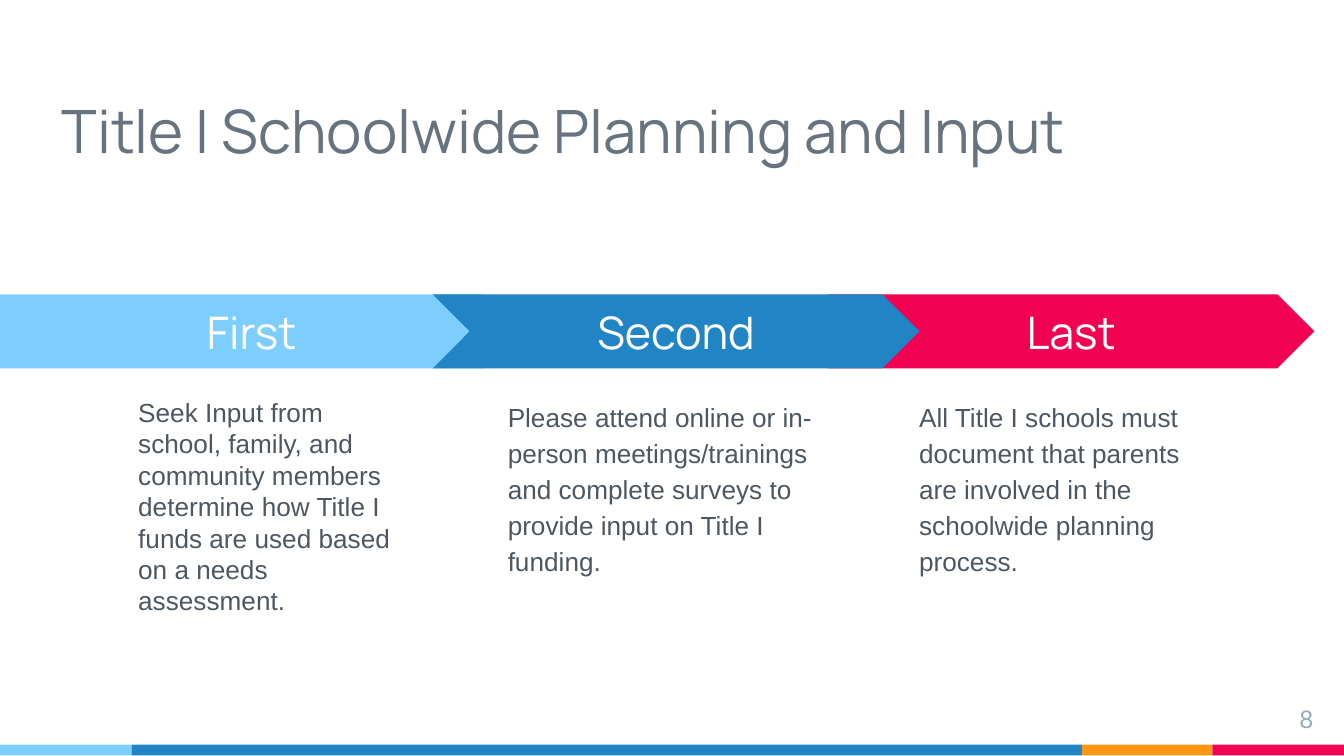
from pptx import Presentation
from pptx.dml.color import RGBColor
from pptx.enum import shapes, text
from pptx.util import Inches, Pt

SKY = RGBColor(0x7E, 0xCE, 0xFD)
BLUE = RGBColor(0x21, 0x85, 0xC5)
ORANGE = RGBColor(0xFF, 0x97, 0x15)
RED = RGBColor(0xF2, 0x02, 0x53)
WHITE = RGBColor(0xFF, 0xFF, 0xFF)
TITLE_GRAY = RGBColor(0x67, 0x74, 0x80)
BODY_GRAY = RGBColor(0x4D, 0x57, 0x60)
NUMBER_GRAY = RGBColor(0x97, 0xAB, 0xBC)

# Content
TITLE = "Title I Schoolwide Planning and Input"
PAGE_NUMBER = "8"
FOOTER = [(0.98, SKY), (7.07, BLUE), (0.97, ORANGE), (0.98, RED)]  # width, colour

# Back to front: each arrow covers the tail of the one behind it
PENTAGON, CHEVRON = shapes.MSO_SHAPE.PENTAGON, shapes.MSO_SHAPE.CHEVRON
STEPS = [  # label, preset, left, width, colour
    ("Last", CHEVRON, 6.16, 3.62, RED),
    ("First", PENTAGON, 0, 3.88, SKY),
    ("Second", CHEVRON, 3.22, 3.62, BLUE),
]
DETAILS = [  # text, (left, top, width, height), vertical inset, line spacing
    ("Seek Input from school, family, and community members determine how "
     "Title I funds are used based on a needs assessment.",
     (0.93, 2.9, 2.18, 1.51), 0.05, 1.0),
    ("Please attend online or in-person meetings/trainings and complete "
     "surveys to provide input on Title I funding.",
     (3.68, 2.85, 2.54, 2.24), 0.1, 1.15),
    ("All Title I schools must document that parents are involved in the "
     "schoolwide planning process.",
     (6.74, 2.85, 2.45, 2.19), 0.1, 1.15),
]
ARROW_TOP, ARROW_HEIGHT = 2.19, 0.55
FOOTER_TOP, FOOTER_HEIGHT = 5.54, 0.08

# Widescreen 16:9 page
deck = Presentation()
deck.slide_width = Inches(10)
deck.slide_height = deck.slide_width * 9 // 16
page = deck.slides.add_slide(deck.slide_layouts[6])


def write(shape, words, size, font, color, align=text.PP_ALIGN.LEFT,
          anchor=text.MSO_ANCHOR.TOP, inset=0.1, spacing=None):
    frame = shape.text_frame
    frame.word_wrap = True
    frame.vertical_anchor = anchor
    frame.margin_left = frame.margin_right = Inches(0.1)
    frame.margin_top = frame.margin_bottom = Inches(inset)
    para = frame.paragraphs[0]
    para.alignment = align
    para.line_spacing = spacing
    span = para.add_run()
    span.text = words
    span.font.size = Pt(size)
    span.font.name = font
    span.font.color.rgb = color


def add_box(area, *args, **options):
    box = page.shapes.add_textbox(*map(Inches, area))
    write(box, *args, **options)


def add_block(preset, area, color):
    block = page.shapes.add_shape(preset, *map(Inches, area))
    block.shadow.inherit = False
    block.fill.solid()
    block.fill.fore_color.rgb = color
    block.line.fill.background()
    return block


# Footer stripe
left = 0
for width, color in FOOTER:
    add_block(shapes.MSO_SHAPE.RECTANGLE,
              (left, FOOTER_TOP, width, FOOTER_HEIGHT), color)
    left += width

# Title
add_box((0.36, 0.39, 8.23, 0.94), TITLE, 32, "Manrope", TITLE_GRAY,
        anchor=text.MSO_ANCHOR.BOTTOM)

# Step arrows
for label, preset, left, width, color in STEPS:
    arrow = add_block(preset, (left, ARROW_TOP, width, ARROW_HEIGHT), color)
    arrow.adjustments[0] = 0.5
    write(arrow, label, 24, "Manrope", WHITE, align=text.PP_ALIGN.CENTER,
          anchor=text.MSO_ANCHOR.MIDDLE)

# Step details
for words, area, inset, spacing in DETAILS:
    add_box(area, words, 14, "Arial", BODY_GRAY, inset=inset, spacing=spacing)

# Page number
add_box((9.27, 5.14, 0.6, 0.34), PAGE_NUMBER, 13, "Lato", NUMBER_GRAY,
        align=text.PP_ALIGN.RIGHT)

deck.save("out.pptx")
